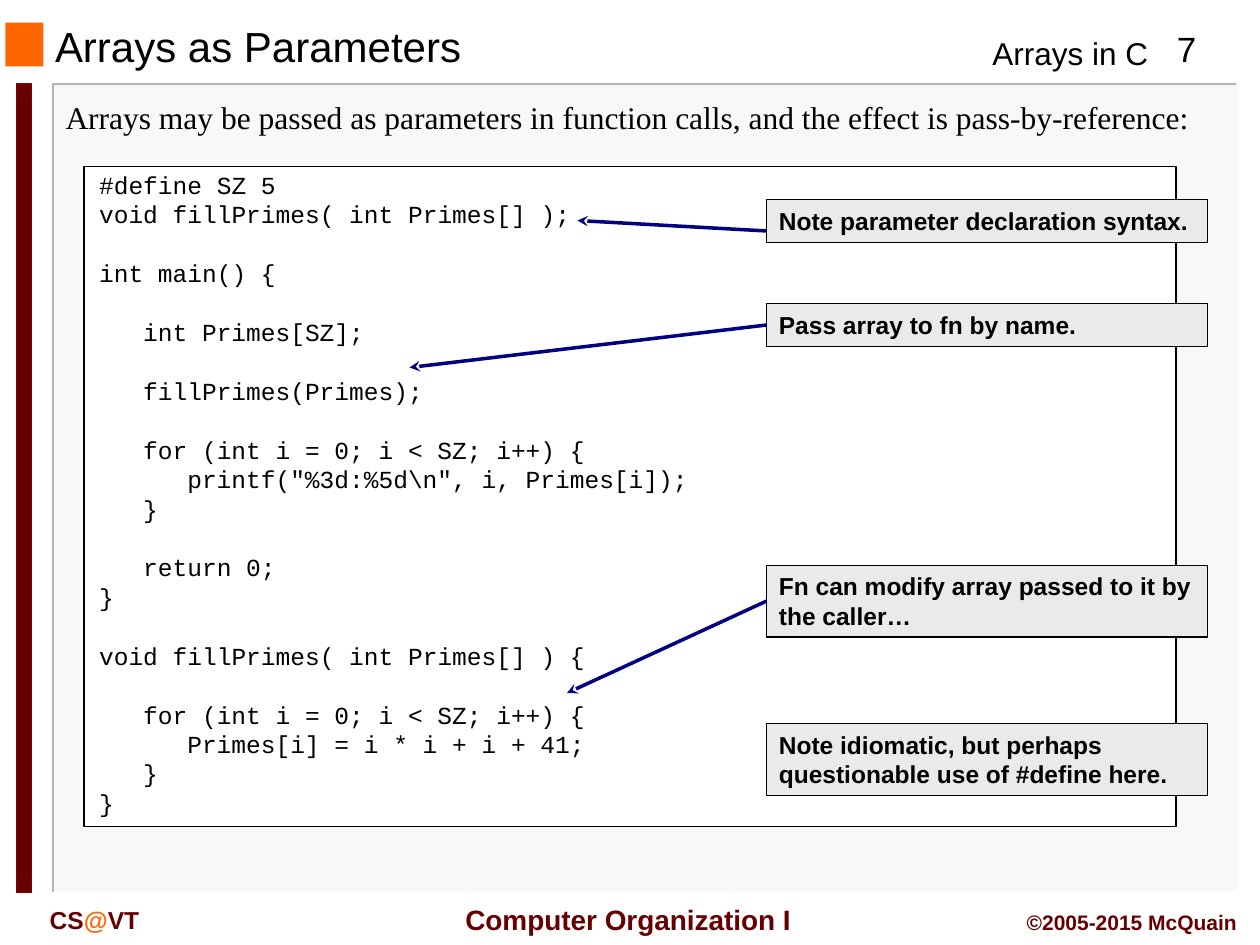
from lxml import etree
from pptx import Presentation
from pptx.dml.color import RGBColor
from pptx.enum.shapes import MSO_CONNECTOR as CONNECTOR, MSO_SHAPE as SHAPE
from pptx.enum.text import MSO_ANCHOR as ANCHOR, PP_ALIGN as ALIGN
from pptx.oxml.ns import qn
from pptx.util import Pt

BLACK = RGBColor(0x00, 0x00, 0x00)
WHITE = RGBColor(0xFF, 0xFF, 0xFF)
PANEL = RGBColor(0xF8, 0xF8, 0xF8)
SILVER = RGBColor(0xB2, 0xB2, 0xB2)
NOTE = RGBColor(0xEA, 0xEA, 0xEA)
ORANGE = RGBColor(0xFF, 0x66, 0x00)
MAROON = RGBColor(0x66, 0x00, 0x00)
RED = RGBColor(0x80, 0x00, 0x00)
NAVY = RGBColor(0x00, 0x00, 0x80)

CODE = r"""#define SZ 5
void fillPrimes( int Primes[] );

int main() {

   int Primes[SZ];

   fillPrimes(Primes);

   for (int i = 0; i < SZ; i++) {
      printf("%3d:%5d\n", i, Primes[i]);
   }

   return 0;
}

void fillPrimes( int Primes[] ) {

   for (int i = 0; i < SZ; i++) {
      Primes[i] = i * i + i + 41;
   }
}"""
CODE_LINE = 16.8
CODE_CHARACTER = 8.4


def add_box(left, top, width, height, fill, line=None):
    box = slide.shapes.add_shape(SHAPE.RECTANGLE, Pt(left), Pt(top), Pt(width), Pt(height))
    box.shadow.inherit = False
    box.fill.solid()
    box.fill.fore_color.rgb = fill
    if line is None:
        box.line.fill.background()
    else:
        box.line.color.rgb = line
        box.line.width = Pt(0.75)
    return box


def write(shape, text, size, name="Arial", color=BLACK, bold=False, align=ALIGN.LEFT, insets=(7.2, 3.6)):
    frame = shape.text_frame
    frame.word_wrap = True
    frame.vertical_anchor = ANCHOR.TOP
    frame.margin_left = frame.margin_right = Pt(insets[0])
    frame.margin_top = frame.margin_bottom = Pt(insets[1])
    frame.text = text
    for paragraph in frame.paragraphs:
        paragraph.alignment = align
        paragraph.font.size = Pt(size)
        paragraph.font.name = name
        paragraph.font.bold = bold
        paragraph.font.color.rgb = color
    return frame


presentation = Presentation()
presentation.slide_width, presentation.slide_height = Pt(720), Pt(540)
slide = presentation.slides.add_slide(presentation.slide_layouts[5])

add_box(31, 48, 677, 461.5, PANEL)
panel_edges = [
    (SILVER, [(706.5, 48), (30.25, 48), (30.25, 509.75)]),
    (WHITE, [(707.75, 48), (707.75, 509.75), (31.5, 509.75)]),
]
for color, points in panel_edges:
    corners = [(Pt(x), Pt(y)) for x, y in points]
    builder = slide.shapes.build_freeform(*corners[0])
    builder.add_line_segments(corners[1:], close=False)
    edge = builder.convert_to_shape()
    edge.shadow.inherit = False
    edge.fill.background()
    edge.line.color.rgb = color
    edge.line.width = Pt(1)
add_box(3, 13, 21.75, 25, ORANGE)
add_box(9.5, 48, 8.5, 462, MAROON, RED)

title = slide.shapes.title
title.left, title.top, title.width, title.height = Pt(30), Pt(8), Pt(522), Pt(37.5)
title_frame = write(title, "Arrays as Parameters", 24, insets=(1.44, 2.16))
title_frame.vertical_anchor = ANCHOR.MIDDLE
title_frame.paragraphs[0].line_spacing = Pt(28)

labels = [
    ("Arrays in C", 560, 16, 109, 29, 18, BLACK, False, ALIGN.LEFT),
    ("7", 654, 12, 48, 32, 20, BLACK, False, ALIGN.CENTER),
    ("Computer Organization I", 254, 512, 210, 27, 16, MAROON, True, ALIGN.CENTER),
    ("CS@VT", 0, 513.5, 108, 24, 14, MAROON, True, ALIGN.CENTER),
    ("©2005-2015 McQuain", 564, 516, 150, 22, 12, MAROON, True, ALIGN.RIGHT),
]
for text, left, top, width, height, size, color, bold, align in labels:
    label = slide.shapes.add_textbox(Pt(left), Pt(top), Pt(width), Pt(height))
    paragraph = write(label, text, size, color=color, bold=bold, align=align).paragraphs[0]
    if "@" in text:
        paragraph.clear()
        for part in ("CS", "@", "VT"):
            run = paragraph.add_run()
            run.text = part
            run.font.color.rgb = ORANGE if part == "@" else MAROON

intro = slide.shapes.add_textbox(Pt(36), Pt(54), Pt(666), Pt(26))
write(
    intro,
    "Arrays may be passed as parameters in function calls, and the effect is pass-by-reference:",
    18,
    "Times New Roman",
    insets=(1.44, 2.16),
)

code_box = add_box(48, 95, 624, 377.25, WHITE, BLACK)
lines = CODE.split("\n")
written = [(number, line) for number, line in enumerate(lines) if line]
code_text = "\n".join(line.strip() for number, line in written)
code_frame = write(code_box, code_text, 14, "Courier New", insets=(8.64, 2.16))
for paragraph, (number, line) in zip(code_frame.paragraphs, written):
    paragraph.line_spacing = Pt(CODE_LINE)
    if number and not lines[number - 1]:
        paragraph.space_before = Pt(CODE_LINE)
    indent = len(line) - len(line.lstrip())
    paragraph._p.get_or_add_pPr().set("marL", str(Pt(indent * CODE_CHARACTER)))

NOTE_LEFT = 438
notes = [
    ("Note parameter declaration syntax.", 114, 24.5, (132, 330, 126), False),
    ("Pass array to fn by name.", 173.5, 24.5, (186, 234, 210), True),
    ("Fn can modify array passed to it by the caller…", 323, 41, (342, 324, 396), True),
    ("Note idiomatic, but perhaps questionable use of #define here.", 413.5, 41, None, False),
]
for text, top, height, arrow_points, joined in notes:
    note = add_box(NOTE_LEFT, top, 252, height, NOTE, BLACK)
    write(note, text, 14, bold=True)
    if arrow_points is None:
        continue
    start_y, tip_x, tip_y = arrow_points
    arrow = slide.shapes.add_connector(
        CONNECTOR.STRAIGHT, Pt(NOTE_LEFT), Pt(start_y), Pt(tip_x), Pt(tip_y)
    )
    if joined:
        arrow.begin_connect(note, 1)
    arrow.line.color.rgb = NAVY
    arrow.line.width = Pt(2)
    etree.SubElement(arrow.line._get_or_add_ln(), qn("a:tailEnd"), type="stealth")
    etree.SubElement(arrow._element.spPr, qn("a:effectLst"))

presentation.save("out.pptx")
